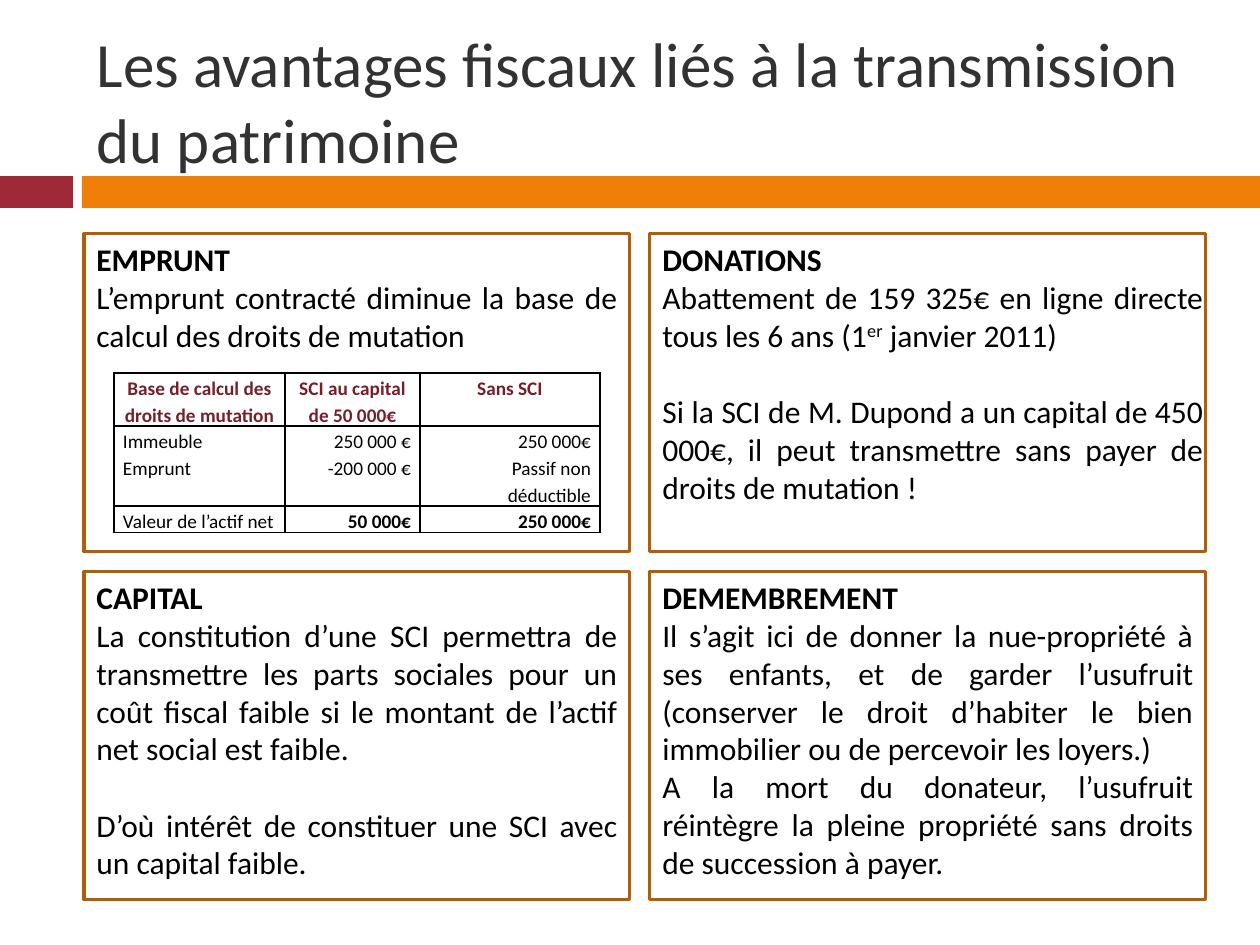
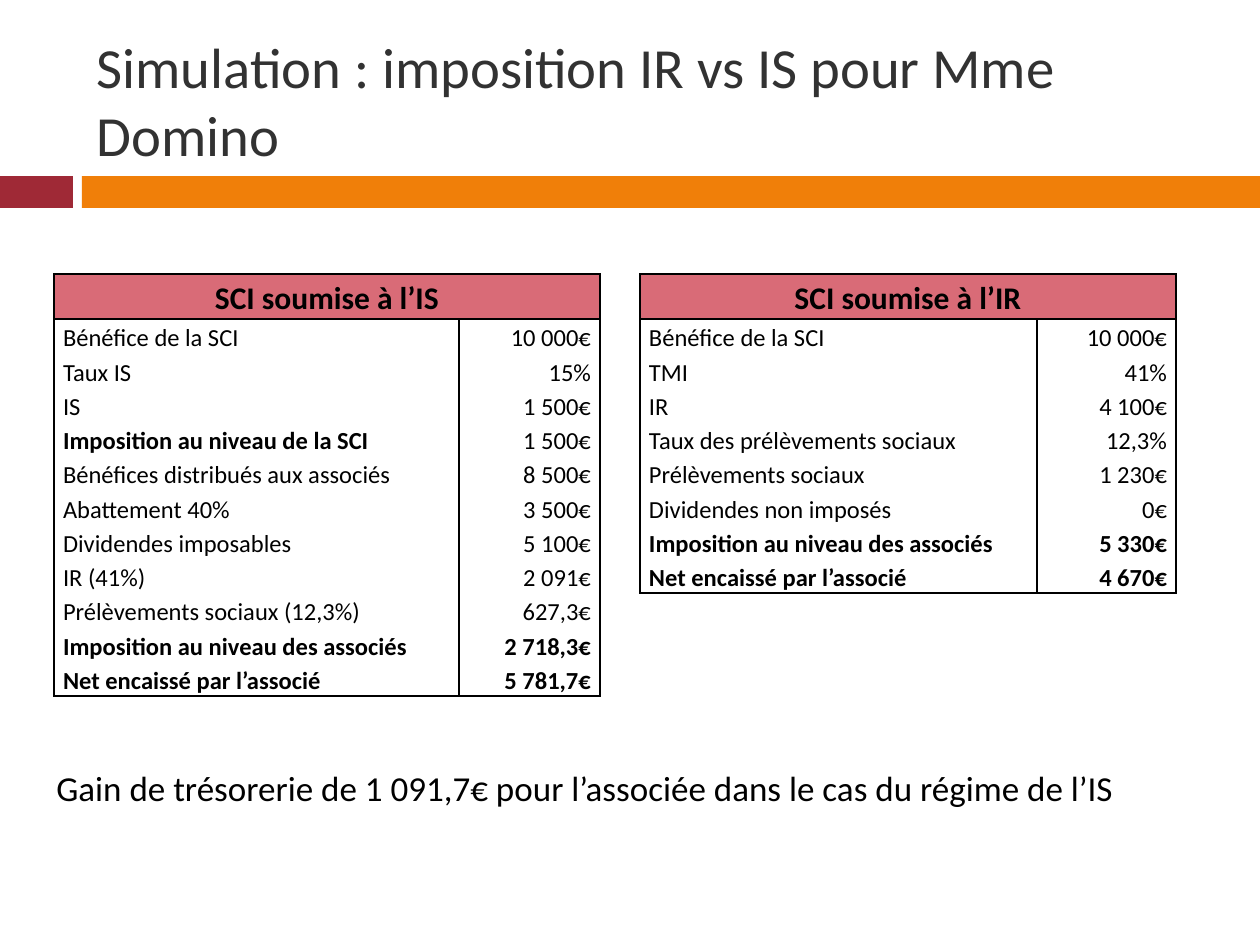
from dataclasses import dataclass

from lxml import etree
from pptx import Presentation
from pptx import util as u
from pptx.dml.color import RGBColor
from pptx.enum import shapes, text
from pptx.oxml.ns import qn

AL = text.PP_ALIGN


@dataclass(frozen=True)
class Theme:
    font: str = "Calibri"
    red: str = "9F2936"
    orange: str = "F07F09"
    frame: str = "B25E07"
    rose: str = "D96B77"
    wine: str = "771F28"
    grey: str = "323232"
    black: str = "000000"
    body: int = 18
    note: int = 20
    cell: int = 14
    small: int = 11
    gap: int = 22


T = Theme()

PANELS = [
    ("EMPRUNT", 546, 127,
     ["L’emprunt contracté diminue la base de calcul des droits de mutation"]),
    ("DONATIONS", 566, 357,
     ["Abattement de 159 325€ en ligne directe tous les 6 ans (1^er^ janvier 2011)",
      "Si la SCI de M. Dupond a un capital de 450 000€, il peut transmettre "
      "sans payer de droits de mutation !"]),
    ("CAPITAL", 546, 318,
     ["La constitution d’une SCI permettra de transmettre les parts sociales "
      "pour un coût fiscal faible si le montant de l’actif net social est faible.",
      "D’où intérêt de constituer une SCI avec un capital faible."]),
    ("DEMEMBREMENT", 556, 318,
     ["Il s’agit ici de donner la nue-propriété à ses enfants, et de garder "
      "l’usufruit (conserver le droit d’habiter le bien immobilier ou de "
      "percevoir les loyers.)",
      "A la mort du donateur, l’usufruit réintègre la pleine propriété sans "
      "droits de succession à payer."]),
]

# A leading * marks a bold line.
BASE = [
    [["*Base de calcul des droits de mutation"],
     ["*SCI au capital de 50 000€"], ["*Sans SCI"]],
    [["Immeuble", "Emprunt"], ["250 000 €", "-200 000 €"],
     ["250 000€", "Passif non déductible"]],
    [["Valeur de l’actif net"], ["*50 000€"], ["*250 000€"]],
]
IS_ROWS = [
    ("Bénéfice de la SCI", "10 000€"),
    ("Taux IS", "15%"),
    ("IS", "1 500€"),
    ("*Imposition au niveau de la SCI", "1 500€"),
    ("Bénéfices distribués aux associés", "8 500€"),
    ("Abattement 40%", "3 500€"),
    ("Dividendes imposables", "5 100€"),
    ("IR (41%)", "2 091€"),
    ("Prélèvements sociaux (12,3%)", "627,3€"),
    ("*Imposition au niveau des associés", "*2 718,3€"),
    ("*Net encaissé par l’associé", "*5 781,7€"),
]
IR_ROWS = [
    ("Bénéfice de la SCI", "10 000€"),
    ("TMI", "41%"),
    ("IR", "4 100€"),
    ("Taux des prélèvements sociaux", "12,3%"),
    ("Prélèvements sociaux", "1 230€"),
    ("Dividendes non imposés", "0€"),
    ("*Imposition au niveau des associés", "*5 330€"),
    ("*Net encaissé par l’associé", "*4 670€"),
]


def px(n):
    return u.Emu(round(n * u.Inches(1) / 126))


def rgb(code):
    return RGBColor.from_string(code)


def apply(obj, **fmt):
    for key, val in fmt.items():
        setattr(obj, key, val)


def write(frame, lines, size, color=T.black, **fmt):
    """Put one paragraph per line; * starts a bold line, ^ encloses a superscript."""
    for i, line in enumerate(lines):
        para = frame.add_paragraph() if i else frame.paragraphs[0]
        apply(para, **fmt)
        for j, part in enumerate(line.removeprefix("*").split("^")):
            run = para.add_run()
            run.text = part
            apply(run.font, name=T.font, size=u.Pt(size), bold=line.startswith("*"))
            run.font.color.rgb = rgb(color)
            if j % 2:
                run._r.get_or_add_rPr().set("baseline", "30000")


def rect(slide, box, fill=None, line=None):
    shape = slide.shapes.add_shape(shapes.MSO_SHAPE.RECTANGLE, *map(px, box))
    shape.shadow.inherit = False
    if fill:
        shape.fill.solid()
        shape.fill.fore_color.rgb = rgb(fill)
    else:
        shape.fill.background()
    if line:
        shape.line.color.rgb = rgb(line)
        shape.line.width = u.Pt(1.75)
    else:
        shape.line.fill.background()
    return shape


def label(slide, box, lines, size):
    frame = slide.shapes.add_textbox(*map(px, box)).text_frame
    apply(frame, word_wrap=True, auto_size=text.MSO_AUTO_SIZE.SHAPE_TO_FIT_TEXT)
    write(frame, lines, size)
    return frame


def bands(slide, layout):
    """Draw the two title bands and move them to the back of the layout."""
    for x, w, fill in ((0, 73, T.red), (82, 1178, T.orange)):
        band = rect(slide, (x, 176, w, 32), fill)
        layout.shapes.element.insert(2, band.element)


def title(slide, line, size):
    head = slide.shapes.title
    apply(head, left=px(84), top=px(32), width=px(1124), height=px(136))
    apply(head.text_frame, word_wrap=True, auto_size=text.MSO_AUTO_SIZE.NONE,
          vertical_anchor=text.MSO_ANCHOR.MIDDLE)
    write(head.text_frame, [line], size, T.grey, alignment=AL.LEFT)


def border(cell):
    props = cell._tc.get_or_add_tcPr()
    for i, side in enumerate(("lnL", "lnR", "lnT", "lnB")):
        line = etree.Element(qn("a:" + side), w=str(u.Pt(1)))
        fill = etree.SubElement(line, qn("a:solidFill"))
        etree.SubElement(fill, qn("a:srgbClr"), val=T.black)
        props.insert(i, line)


def grid(slide, x, y, cols, rows):
    """Add a plain table with black borders and tight margins."""
    box = (x, y, sum(cols), sum(rows))
    table = slide.shapes.add_table(len(rows), len(cols), *map(px, box)).table
    apply(table, first_row=False, horz_banding=False)
    for col, w in zip(table.columns, cols):
        col.width = px(w)
    for row, h in zip(table.rows, rows):
        row.height = px(h)
    for cell in table.iter_cells():
        apply(cell, margin_left=px(9), margin_right=px(9),
              margin_top=0, margin_bottom=0)
        cell.fill.background()
        border(cell)
    return table


def entry(cell, lines, size, align, color=T.black):
    write(cell.text_frame, lines, size, color, alignment=align, line_spacing=1.15)


def panel(slide, box, name, wide, high, lines):
    rect(slide, box, line=T.frame)
    frame = label(slide, (*box[:2], wide, high), ["*" + name, *lines], T.body)
    for para in frame.paragraphs[1:]:
        para.alignment = AL.JUSTIFY
    if name in ("DONATIONS", "CAPITAL"):
        frame.paragraphs[1].space_after = u.Pt(T.gap)


def base(slide):
    table = grid(slide, 114, 373, (171, 135, 180), (53, 80, 26))
    for r, row in enumerate(BASE):
        for c, lines in enumerate(row):
            align = AL.CENTER if r == 0 else AL.RIGHT if c else AL.JUSTIFY
            entry(table.cell(r, c), lines, T.small, align,
                  T.black if r else T.wine)


def regime(slide, x, cols, name, rows, high):
    table = grid(slide, x, 274, cols, (45, high))
    head = table.cell(0, 0)
    head.merge(table.cell(0, 1))
    head.fill.solid()
    head.fill.fore_color.rgb = rgb(T.rose)
    entry(head, ["*" + name], T.body, AL.CENTER)
    for c, (lines, align) in enumerate(zip(zip(*rows), (AL.JUSTIFY, AL.RIGHT))):
        entry(table.cell(1, c), lines, T.cell, align)


def main():
    deck = Presentation()
    apply(deck, slide_width=px(1260), slide_height=px(945))
    layout = deck.slide_layouts.get_by_name("Title Only")

    gifts = deck.slides.add_slide(layout)
    bands(gifts, layout)
    title(gifts, "Les avantages fiscaux liés à la transmission du patrimoine", 36)
    spots = [(x, y, w, h) for y, h in ((234, 318), (572, 328))
             for x, w in ((84, 546), (650, 556))]
    for box, item in zip(spots, PANELS):
        panel(gifts, box, *item)
    base(gifts)

    tax = deck.slides.add_slide(layout)
    title(tax, "Simulation : imposition IR vs IS pour Mme Domino", 32.4)
    regime(tax, 640, (397, 139), "SCI soumise à l’IR", IR_ROWS, 273)
    regime(tax, 54, (405, 141), "SCI soumise à l’IS", IS_ROWS, 376)
    label(tax, (44, 760, 1111, 55),
          ["Gain de trésorerie de 1 091,7€ pour l’associée dans le cas du régime de l’IS"],
          T.note)

    deck.save("out.pptx")


if __name__ == "__main__":
    main()
